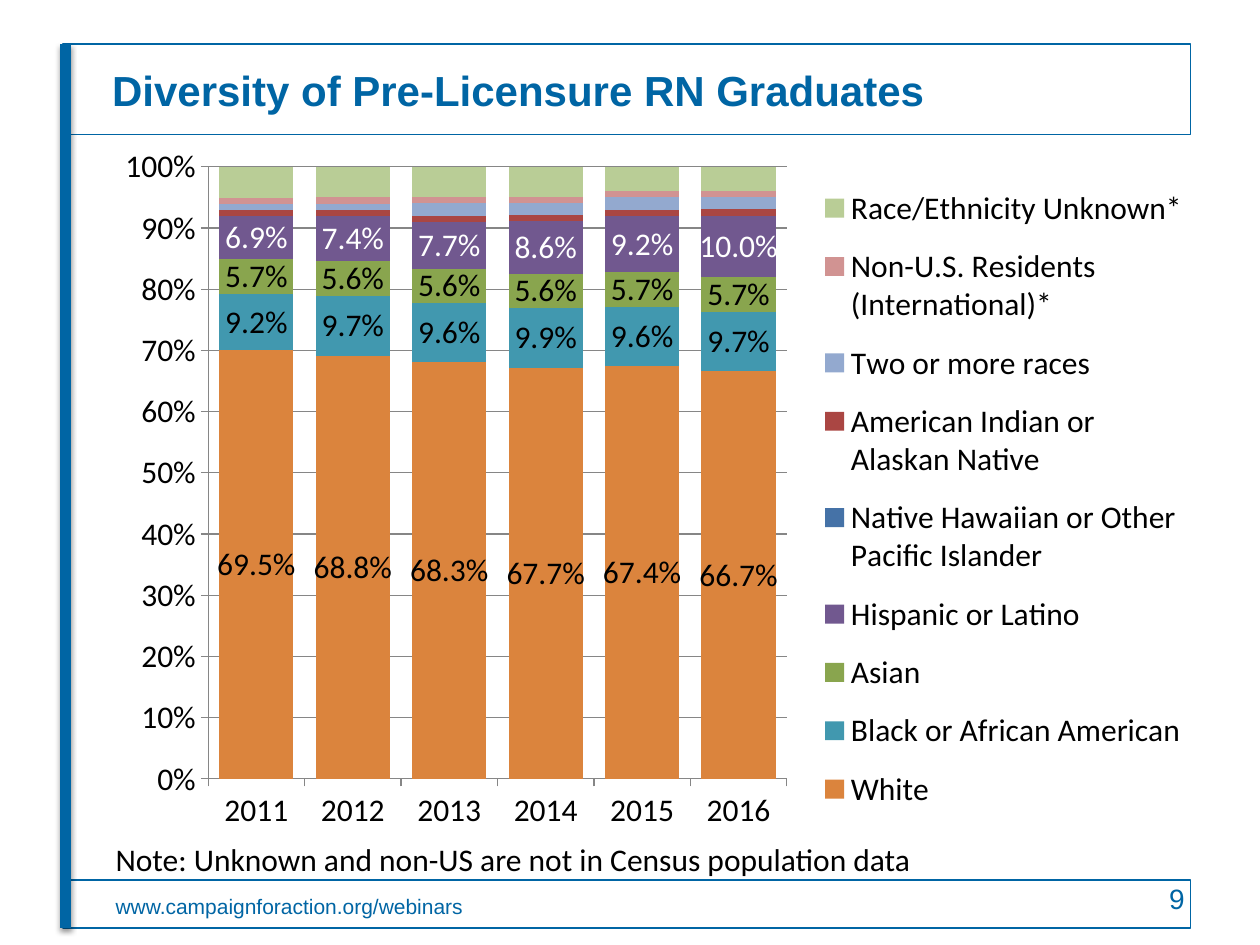
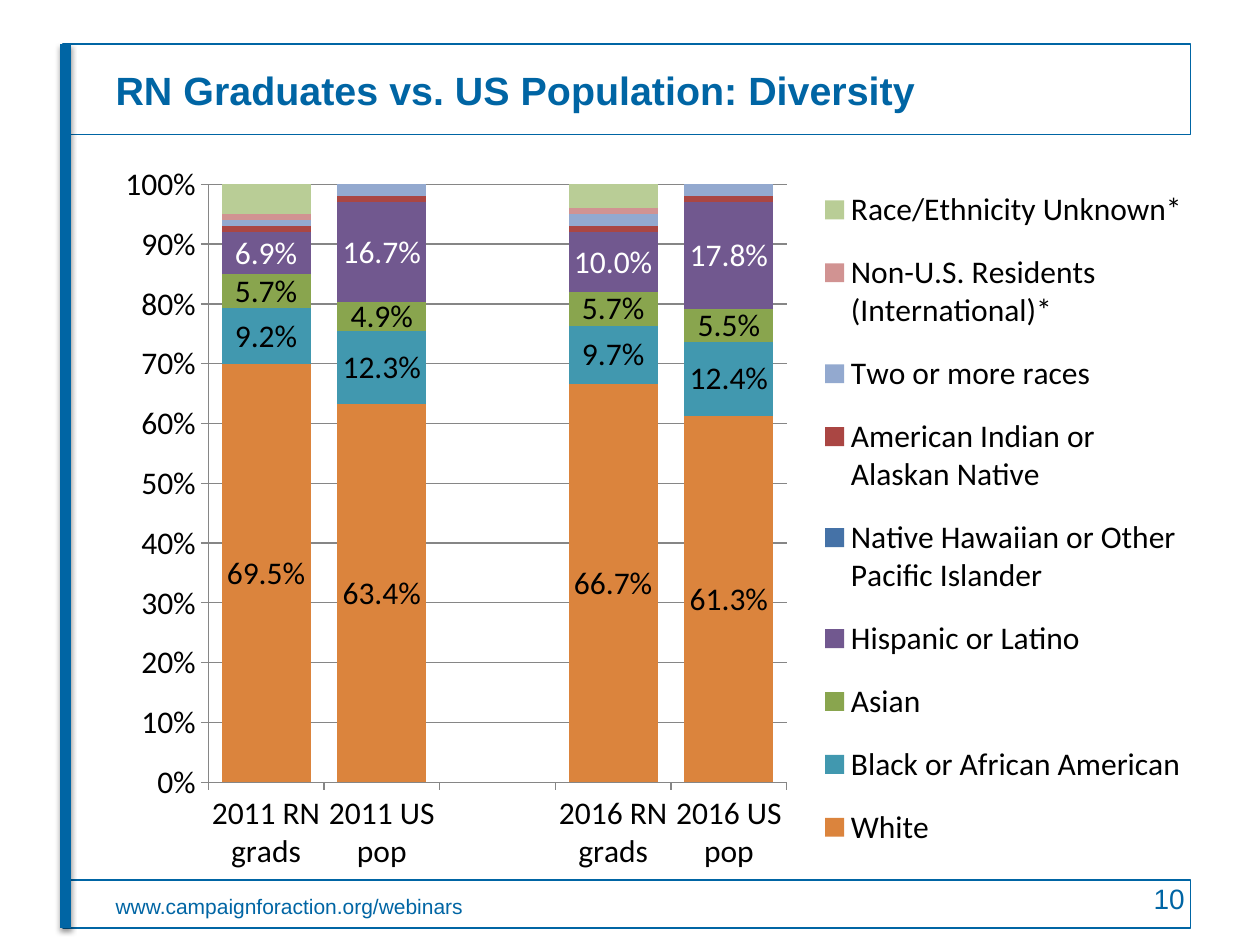
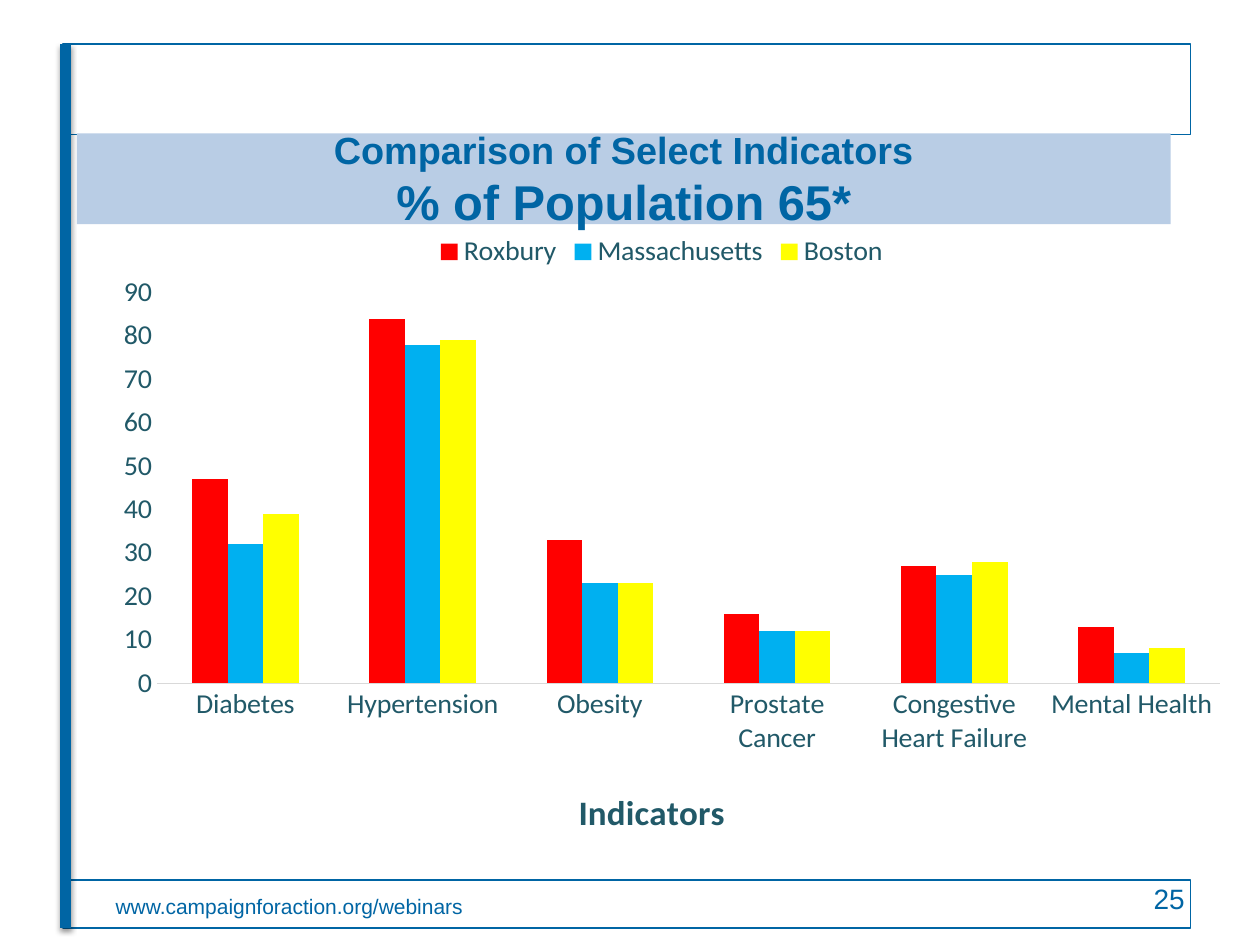
from dataclasses import dataclass
from typing import NamedTuple

from lxml import etree
from pptx import Presentation
from pptx.chart.data import CategoryChartData
from pptx.dml.color import RGBColor
from pptx.enum.chart import XL_CHART_TYPE, XL_LABEL_POSITION, XL_LEGEND_POSITION, XL_TICK_MARK
from pptx.enum.shapes import MSO_CONNECTOR, MSO_SHAPE
from pptx.enum.text import MSO_ANCHOR, PP_ALIGN
from pptx.oxml import parse_xml
from pptx.oxml.ns import nsdecls, qn
from pptx.util import Cm, Pt

STACKED = XL_CHART_TYPE.COLUMN_STACKED_100
CLUSTERED = XL_CHART_TYPE.COLUMN_CLUSTERED
LABEL_CENTER = XL_LABEL_POSITION.CENTER
LEGEND_RIGHT = XL_LEGEND_POSITION.RIGHT
LEGEND_TOP = XL_LEGEND_POSITION.TOP
TICK_OUTSIDE = XL_TICK_MARK.OUTSIDE
TICK_NONE = XL_TICK_MARK.NONE
STRAIGHT = MSO_CONNECTOR.STRAIGHT
RECTANGLE = MSO_SHAPE.RECTANGLE
TOP = MSO_ANCHOR.TOP
MIDDLE = MSO_ANCHOR.MIDDLE
LEFT = PP_ALIGN.LEFT
CENTER = PP_ALIGN.CENTER
RIGHT = PP_ALIGN.RIGHT


@dataclass(frozen=True)
class Theme:
    heading_font: str = "Arial"
    body_font: str = "Calibri"
    blue: str = "0065A4"
    white: str = "FFFFFF"
    black: str = "000000"
    band: str = "B9CDE5"
    grid: str = "868686"
    pale_line: str = "D9D9D9"
    teal_text: str = "215968"
    title_size: float = 24
    comparison_size: float = 22.5
    band_size: float = 21.6
    band_large_size: float = 27.9
    axis_title_size: float = 20
    chart_size: float = 18
    indicator_size: float = 16
    number_size: float = 16
    footer_size: float = 12


class Box(NamedTuple):
    left: float
    top: float
    width: float
    height: float

    def lengths(self):
        return [Cm(value) for value in self]


THEME = Theme()
FRAME = Box(1.27, 0.89, 22.73, 17.82)
HEADER_HEIGHT = 1.83
FOOTER_HEIGHT = 0.97
FOOTER_TEXT = "www.campaignforaction.org/webinars"

GROUPS = [
    ("White", "DB843D", THEME.black),
    ("Black or African American", "4198AF", THEME.black),
    ("Asian", "89A54E", THEME.black),
    ("Hispanic or Latino", "71588F", THEME.white),
    ("Native Hawaiian or Other Pacific Islander", "4572A7", None),
    ("American Indian or Alaskan Native", "AA4643", None),
    ("Two or more races", "93A9CF", None),
    ("Non-U.S. Residents (International)*", "D19392", None),
    ("Race/Ethnicity Unknown*", "B9CD96", None),
]

GRADUATE_YEARS = ["2011", "2012", "2013", "2014", "2015", "2016"]
GRADUATE_SHARES = [
    [0.695, 0.688, 0.683, 0.677, 0.674, 0.667],
    [0.092, 0.097, 0.096, 0.099, 0.096, 0.097],
    [0.057, 0.056, 0.056, 0.056, 0.057, 0.057],
    [0.069, 0.074, 0.077, 0.086, 0.092, 0.1],
    [0, 0, 0, 0, 0, 0],
    [0.01, 0.01, 0.01, 0.01, 0.01, 0.01],
    [0.01, 0.01, 0.02, 0.02, 0.02, 0.02],
    [0.01, 0.01, 0.01, 0.01, 0.01, 0.01],
    [0.05, 0.05, 0.05, 0.05, 0.04, 0.04],
]

POPULATION_COLUMNS = ["2011 RN grads", "2011 US pop", "", "2016 RN grads", "2016 US pop"]
POPULATION_SHARES = [
    [0.695, 0.634, None, 0.667, 0.613],
    [0.092, 0.123, None, 0.097, 0.124],
    [0.057, 0.049, None, 0.057, 0.055],
    [0.069, 0.167, None, 0.1, 0.178],
    [0, 0, None, 0, 0],
    [0.01, 0.01, None, 0.01, 0.01],
    [0.01, 0.02, None, 0.02, 0.02],
    [0.01, 0, None, 0.01, 0],
    [0.05, 0, None, 0.04, 0],
]

INDICATORS = ["Diabetes", "Hypertension", "Obesity", "Prostate Cancer",
              "Congestive Heart Failure", "Mental Health"]
PLACES = [
    ("Roxbury", "FF0000", [47, 84, 33, 16, 27, 13]),
    ("Massachusetts", "00B0F0", [32, 78, 23, 12, 25, 7]),
    ("Boston", "FFFF00", [39, 79, 23, 12, 28, 8]),
]


def rgb(value):
    return RGBColor.from_string(value)


def format_font(font, size, color, name=THEME.body_font, bold=False):
    font.size = Pt(size)
    font.name = name
    font.bold = bold
    font.color.rgb = rgb(color)


def add_text(slide, box, lines, size, color=THEME.blue, font=THEME.heading_font,
             bold=False, align=LEFT, anchor=TOP, fill=None):
    shape = slide.shapes.add_textbox(*box.lengths())
    if fill:
        shape.fill.solid()
        shape.fill.fore_color.rgb = rgb(fill)
    frame = shape.text_frame
    frame.word_wrap = True
    frame.vertical_anchor = anchor
    paragraph = frame.paragraphs[0]
    paragraph.alignment = align
    sized_lines = [(lines, size)] if isinstance(lines, str) else lines
    for index, (line, line_size) in enumerate(sized_lines):
        if index:
            paragraph.add_line_break()
        run = paragraph.add_run()
        run.text = line
        format_font(run.font, line_size, color, font, bold)


def add_outline(slide, box, fill=None):
    shape = slide.shapes.add_shape(RECTANGLE, *box.lengths())
    shape.shadow.inherit = False
    if fill:
        shape.fill.solid()
        shape.fill.fore_color.rgb = rgb(fill)
    else:
        shape.fill.background()
    shape.line.color.rgb = rgb(THEME.blue)
    shape.line.width = Pt(0.75)


def add_side_bar(slide, box):
    x = Cm(box.left + 0.05)
    bar = slide.shapes.add_connector(STRAIGHT, x, Cm(box.top), x, Cm(box.top + box.height))
    bar.line.color.rgb = rgb(THEME.blue)
    bar.line.width = Pt(6)
    bar._element.spPr.append(parse_xml(
        f'<a:effectLst {nsdecls("a")}>'
        f'<a:outerShdw blurRad="{Pt(3.1)}" dist="{Pt(1.6)}" dir="5400000" rotWithShape="0">'
        f'<a:srgbClr val="{THEME.black}"><a:alpha val="38000"/></a:srgbClr>'
        '</a:outerShdw></a:effectLst>'))


def add_frame(slide, box, number):
    footer_top = box.top + box.height - FOOTER_HEIGHT
    add_outline(slide, Box(box.left, footer_top, box.width, FOOTER_HEIGHT), THEME.white)
    add_outline(slide, Box(box.left, box.top, box.width, HEADER_HEIGHT))
    add_side_bar(slide, box)
    add_text(slide, Box(box.left + 0.81, footer_top + 0.14, 21.74, 0.76),
             FOOTER_TEXT, THEME.footer_size)
    add_text(slide, Box(box.left + 16.94, footer_top - 0.09, 5.92, 1.02),
             str(number), THEME.number_size, align=RIGHT)


def set_layout(element, position, x, y, width=None, height=None, inner=False):
    for previous in element.findall(qn("c:layout")):
        element.remove(previous)
    layout = etree.Element(qn("c:layout"))
    manual = etree.SubElement(layout, qn("c:manualLayout"))
    settings = [("xMode", "edge"), ("yMode", "edge"), ("x", x), ("y", y),
                ("w", width), ("h", height)]
    if inner:
        settings.insert(0, ("layoutTarget", "inner"))
    for name, value in settings:
        if value is not None:
            etree.SubElement(manual, qn(f"c:{name}")).set("val", str(value))
    element.insert(position, layout)


def add_column_chart(slide, box, kind, categories, rows, gap, overlap, plot_layout):
    data = CategoryChartData()
    data.categories = categories
    for name, _, values in rows:
        data.add_series(name, values)
    chart = slide.shapes.add_chart(kind, *box.lengths(), data).chart
    chart.has_title = False
    chart.has_legend = True
    chart.legend.include_in_layout = False
    plot = chart.plots[0]
    plot.gap_width = gap
    plot.overlap = overlap
    plot.vary_by_categories = False
    for series, (_, color, _) in zip(plot.series, rows):
        series.format.fill.solid()
        series.format.fill.fore_color.rgb = rgb(color)
        series.format.line.fill.background()
        series.invert_if_negative = False
    set_layout(plot._element.getparent(), 0, *plot_layout, inner=True)
    return chart


def style_axis(axis, tick, line_color):
    axis.major_tick_mark = tick
    axis.minor_tick_mark = TICK_NONE
    if line_color:
        axis.format.line.color.rgb = rgb(line_color)
        axis.format.line.width = Pt(0.75)
    else:
        axis.format.line.fill.background()


def set_scale(axis, maximum, step, number_format):
    axis.minimum_scale = 0
    axis.maximum_scale = maximum
    axis.major_unit = step
    axis.tick_labels.number_format = number_format
    axis.tick_labels.number_format_is_linked = False


def add_diversity_chart(slide, box, categories, shares, plot_layout, legend_layout):
    rows = [(name, color, values) for (name, color, _), values in zip(GROUPS, shares)]
    chart = add_column_chart(slide, box, STACKED, categories, rows, 30, 100, plot_layout)
    format_font(chart.font, THEME.chart_size, THEME.black)
    chart.legend.position = LEGEND_RIGHT
    set_layout(chart.legend._element, 1, *legend_layout)
    for axis in (chart.category_axis, chart.value_axis):
        style_axis(axis, TICK_OUTSIDE, THEME.grid)
    set_scale(chart.value_axis, 1, 0.1, "0%")
    grid_line = chart.value_axis.major_gridlines.format.line
    grid_line.color.rgb = rgb(THEME.grid)
    grid_line.width = Pt(0.75)
    for series, (_, _, label_color) in zip(chart.plots[0].series, GROUPS):
        if label_color:
            labels = series.data_labels
            labels.show_value = True
            labels.position = LABEL_CENTER
            labels.number_format = "0.0%"
            labels.number_format_is_linked = False
            format_font(labels.font, THEME.chart_size, label_color)


def add_indicator_chart(slide, box):
    chart = add_column_chart(slide, box, CLUSTERED, INDICATORS, PLACES, 199, 0,
                             (0.048, 0.118, 0.952, 0.641))
    format_font(chart.font, THEME.indicator_size, THEME.teal_text)
    chart.legend.position = LEGEND_TOP
    category_axis, value_axis = chart.category_axis, chart.value_axis
    style_axis(category_axis, TICK_NONE, THEME.pale_line)
    style_axis(value_axis, TICK_NONE, None)
    value_axis.has_major_gridlines = False
    set_scale(value_axis, 90, 10, "General")
    title = category_axis.axis_title
    run = title.text_frame.paragraphs[0].add_run()
    run.text = "Indicators"
    format_font(run.font, THEME.axis_title_size, THEME.teal_text, bold=True)
    set_layout(title._element, 1, 0.42, 0.92)


def build_graduates(slide, box):
    add_text(slide, Box(box.left + 0.74, box.top, 22.05, HEADER_HEIGHT),
             "Diversity of Pre-Licensure RN Graduates", THEME.title_size,
             bold=True, anchor=MIDDLE)
    add_diversity_chart(slide, Box(box.left + 0.81, box.top + 1.8, 22.05, 14.3),
                        GRADUATE_YEARS, GRADUATE_SHARES,
                        (0.096, 0.047, 0.529, 0.863), (0.655, 0.05, 0.34, 0.93))
    add_text(slide, Box(box.left + 0.81, box.top + 15.92, 22.05, 1.02),
             "Note: Unknown and non-US are not in Census population data",
             THEME.chart_size, color=THEME.black, font=THEME.body_font)


def build_population(slide, box):
    add_text(slide, Box(box.left + 0.81, box.top, 22.05, HEADER_HEIGHT),
             "RN Graduates vs. US Population: Diversity", THEME.comparison_size,
             bold=True, anchor=MIDDLE)
    add_diversity_chart(slide, Box(box.left + 0.81, box.top + 2.16, 22.05, 14.81),
                        POPULATION_COLUMNS, POPULATION_SHARES,
                        (0.096, 0.045, 0.529, 0.814), (0.655, 0.02, 0.34, 0.96))


def build_indicators(slide, box):
    add_text(slide, Box(box.left + 0.28, box.top + 1.8, 22.05, HEADER_HEIGHT),
             [("Comparison of Select Indicators", THEME.band_size),
              ("% of Population 65*", THEME.band_large_size)],
             THEME.band_size, bold=True, align=CENTER, anchor=MIDDLE, fill=THEME.band)
    add_indicator_chart(slide, Box(box.left + 0.81, box.top + 3.56, 22.53, 12.57))


def main():
    presentation = Presentation()
    presentation.slide_width = Cm(25.4)
    presentation.slide_height = Cm(19.05)
    blank = presentation.slide_layouts[6]
    for number, build in ((9, build_graduates), (10, build_population), (25, build_indicators)):
        slide = presentation.slides.add_slide(blank)
        add_frame(slide, FRAME, number)
        build(slide, FRAME)
    presentation.save("out.pptx")


if __name__ == "__main__":
    main()
